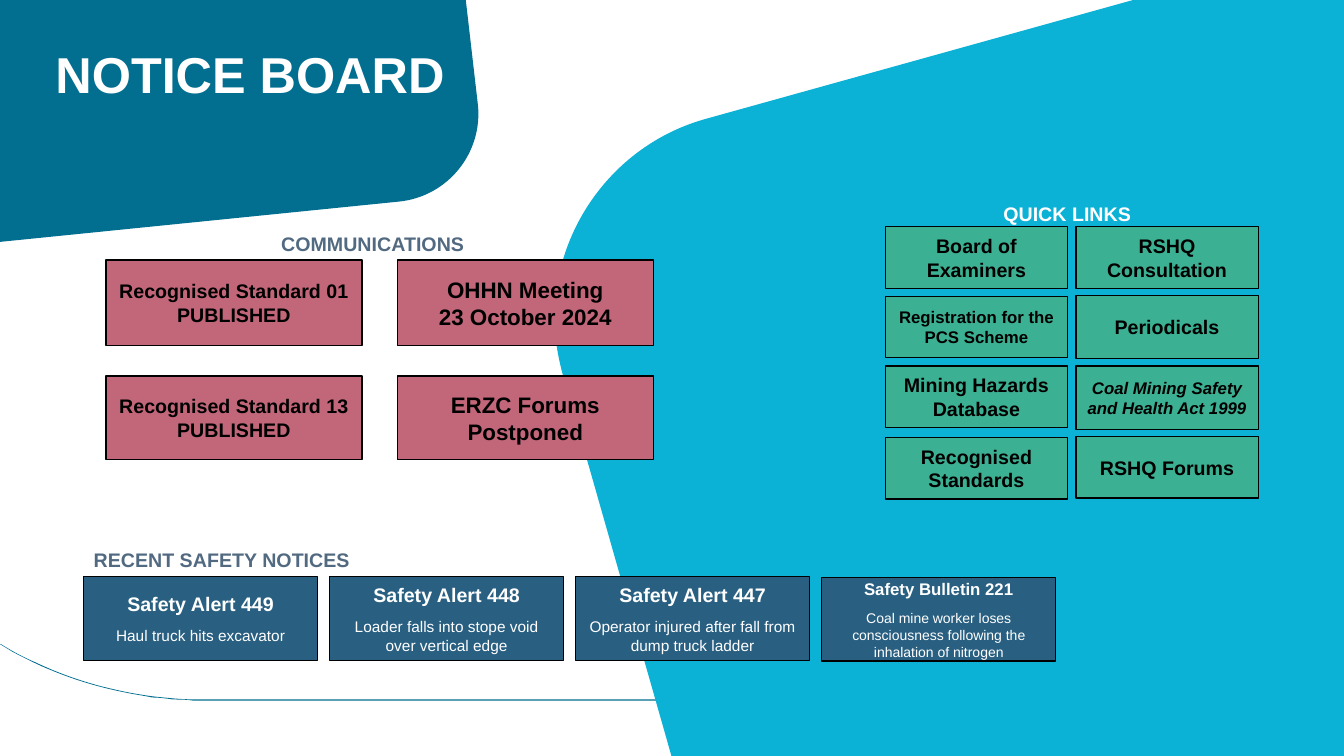
"""Build the notice board slide with communications, quick links and safety notices."""
from dataclasses import dataclass

from lxml import etree
from pptx import Presentation, util as u
from pptx.dml import color
from pptx.enum import shapes, text
from pptx.oxml import ns

RECT = shapes.MSO_SHAPE.RECTANGLE
BUTTON = shapes.MSO_SHAPE.ACTION_BUTTON_CUSTOM
CENTER, LEFT = text.PP_ALIGN.CENTER, text.PP_ALIGN.LEFT
TEAL, CYAN, GREEN, ROSE, NAVY = "026F90", "0CB1D6", "3CB092", "C2667A", "295F81"
BLACK, WHITE, SLATE = "000000", "FFFFFF", "526A81"


@dataclass
class Line:
    text: str
    size: float
    bold: bool = True
    italic: bool = False
    before: float = 0


@dataclass
class Card:
    left: float
    top: float
    width: float
    height: float
    fill: str
    ink: str
    lines: list[Line]
    kind: shapes.MSO_SHAPE = BUTTON


@dataclass
class Heading:
    text: str
    left: float
    top: float
    width: float
    height: float
    ink: str = SLATE
    align: text.PP_ALIGN = LEFT
    spacing: float = 1.0


@dataclass
class Outline:
    """Hold a fill, a start point and steps of two (line) or six (curve) numbers."""
    fill: str
    start: tuple[float, float]
    steps: list[tuple[float, ...]]


OUTLINES = [
    Outline(TEAL, (0, 6.39), [
        (0.01, 6.39), (0.12, 6.46, 0.23, 6.52, 0.35, 6.57),
        (0.56, 6.67, 0.78, 6.75, 1.01, 6.81), (1.13, 6.84, 1.26, 6.87, 1.39, 6.89),
        (1.5, 6.91, 1.62, 6.92, 1.73, 6.93), (1.84, 6.94, 1.95, 6.94, 2.06, 6.94),
        (13.31, 6.94), (13.32, 6.94, 13.33, 6.94, 13.33, 6.94), (13.33, 6.95),
        (1.92, 6.95), (1.92, 6.95, 1.91, 6.95, 1.91, 6.95),
        (1.85, 6.94, 1.78, 6.94, 1.72, 6.94), (1.65, 6.93, 1.58, 6.92, 1.51, 6.92),
        (1.42, 6.9, 1.33, 6.89, 1.24, 6.87), (0.99, 6.82, 0.75, 6.75, 0.51, 6.65),
        (0.38, 6.6, 0.25, 6.53, 0.13, 6.47), (0, 6.39)]),
    Outline(TEAL, (0, 0), [
        (4.62, 0), (4.74, 1.04), (4.79, 1.52, 4.44, 1.95, 3.96, 2), (0, 2.4)]),
    Outline(CYAN, (11.24, 0), [
        (13.33, 0), (13.33, 7.5), (6.66, 7.5), (5.58, 3.71),
        (5.53, 3.52, 5.5, 3.34, 5.5, 3.15), (5.5, 2.26, 6.1, 1.43, 7, 1.18)]),
]
QUICK_LINKS = [
    Card(8.78, 2.25, 1.81, 0.61, GREEN, BLACK, [Line("Board of Examiners", 14)], RECT),
    Card(8.78, 2.94, 1.81, 0.61, GREEN, BLACK,
         [Line("Registration for the PCS Scheme", 12)], RECT),
    Card(8.78, 3.63, 1.81, 0.61, GREEN, BLACK, [Line("Mining Hazards Database", 14)], RECT),
    Card(8.78, 4.34, 1.81, 0.61, GREEN, BLACK, [Line("Recognised Standards", 14)]),
    Card(10.67, 2.25, 1.81, 0.61, GREEN, BLACK, [Line("RSHQ Consultation", 14)]),
    Card(10.67, 2.93, 1.81, 0.63, GREEN, BLACK, [Line("Periodicals", 14)]),
    Card(10.67, 3.63, 1.81, 0.63, GREEN, BLACK,
         [Line("Coal Mining Safety and Health Act 1999", 12, italic=True)]),
    Card(10.67, 4.33, 1.81, 0.61, GREEN, BLACK, [Line("RSHQ Forums", 14)]),
]
COMMUNICATIONS = [
    (2.58, 0.85, [("Recognised Standard 01", "PUBLISHED", 14),
                  ("OHHN Meeting", "23 October 2024", 16)]),
    (3.73, 0.83, [("Recognised Standard 13", "PUBLISHED", 14),
                  ("ERZC Forums", "Postponed", 16)]),
]
NOTICES = [
    ("Safety Alert 449", "Haul truck hits excavator", 14, 11, 5.72),
    ("Safety Alert 448", "Loader falls into stope void over vertical edge", 14, 11, 5.72),
    ("Safety Alert 447", "Operator injured after fall from dump truck ladder", 14, 11, 5.72),
    ("Safety Bulletin 221",
     "Coal mine worker loses consciousness following the inhalation of nitrogen", 12, 10, 5.73),
]
HEADINGS = [
    Heading("COMMUNICATIONS", 2.69, 2.25, 2.2, 0.36),
    Heading("QUICK LINKS", 9.68, 1.98, 1.81, 0.33, WHITE, CENTER, 0.9),
    Heading("RECENT SAFETY NOTICES", 0.83, 5.39, 3.09, 0.36),
]


def rgb(value: str) -> color.RGBColor:
    """Turn a hex string into a colour."""
    return color.RGBColor.from_string(value)


def style(p, line: Line, ink: str, align: text.PP_ALIGN) -> None:
    """Write one line into a paragraph and format it."""
    p.text, p.alignment = line.text, align
    p.font.name, p.font.size = "Arial", u.Pt(line.size)
    p.font.bold, p.font.italic = line.bold, line.italic
    p.font.color.rgb = rgb(ink)
    p.space_before = u.Pt(line.before)


def bend(sp, steps: list[tuple[float, ...]]) -> None:
    """Turn the straight segments of six-number steps into cubic curves."""
    segments = list(sp.element.iter(ns.qn("a:lnTo")))
    for segment, step in zip(segments, steps):
        if len(step) == 6:
            curve = etree.Element(ns.qn("a:cubicBezTo"))
            for x, y in zip(step[::2], step[1::2]):
                etree.SubElement(curve, ns.qn("a:pt"), x=str(u.Inches(x) - sp.left),
                                 y=str(u.Inches(y) - sp.top))
            segment.getparent().replace(segment, curve)


def draw_outline(slide, outline: Outline) -> None:
    """Draw a filled background outline."""
    ends = [(u.Inches(step[-2]), u.Inches(step[-1])) for step in outline.steps]
    builder = slide.shapes.build_freeform(*map(u.Inches, outline.start))
    builder.add_line_segments(ends, close=True)
    sp = builder.convert_to_shape()
    bend(sp, outline.steps)
    sp.shadow.inherit = False
    sp.fill.solid()
    sp.fill.fore_color.rgb = rgb(outline.fill)
    sp.line.fill.background()


def draw_card(slide, card: Card) -> None:
    """Draw a bordered card with centred lines."""
    box = map(u.Inches, (card.left, card.top, card.width, card.height))
    sp = slide.shapes.add_shape(card.kind, *box)
    sp.shadow.inherit = False
    sp.fill.solid()
    sp.fill.fore_color.rgb = rgb(card.fill)
    sp.line.color.rgb = rgb(BLACK)
    sp.line.width = u.Pt(1)
    tf = sp.text_frame
    tf.word_wrap, tf.vertical_anchor = True, text.MSO_ANCHOR.MIDDLE
    for i, line in enumerate(card.lines):
        style(tf.add_paragraph() if i else tf.paragraphs[0], line, card.ink, CENTER)


def draw_heading(slide, head: Heading) -> None:
    """Draw a section heading."""
    box = map(u.Inches, (head.left, head.top, head.width, head.height))
    tf = slide.shapes.add_textbox(*box).text_frame
    tf.word_wrap = True
    style(tf.paragraphs[0], Line(head.text, 14), head.ink, head.align)
    tf.paragraphs[0].line_spacing = head.spacing


def draw_title(slide) -> None:
    """Place the title in front of the background outlines."""
    title = slide.shapes.title
    title.left, title.top, title.width, title.height = map(u.Inches, (0.51, 0.47, 4.12, 0.83))
    tf = title.text_frame
    tf.word_wrap, tf.auto_size = True, text.MSO_AUTO_SIZE.NONE
    tf.vertical_anchor = text.MSO_ANCHOR.TOP
    tf.margin_left = tf.margin_top = tf.margin_right = tf.margin_bottom = u.Inches(0.04)
    style(tf.paragraphs[0], Line("NOTICE BOARD", 36), WHITE, LEFT)
    tf.paragraphs[0].line_spacing = u.Pt(37.5)
    title.element.getparent().append(title.element)


def main() -> None:
    """Build and save the slide."""
    prs = Presentation()
    prs.slide_width, prs.slide_height = u.Inches(13.33), u.Inches(7.5)
    slide = prs.slides.add_slide(prs.slide_layouts[5])
    for outline in OUTLINES:
        draw_outline(slide, outline)
    for card in QUICK_LINKS:
        draw_card(slide, card)
    for top, height, pair in COMMUNICATIONS:
        for col, (name, status, size) in enumerate(pair):
            draw_card(slide, Card(1.05 + 2.89 * col, top, 2.54, height, ROSE, BLACK,
                                  [Line(name, size), Line(status, size)], RECT))
    for col, (name, detail, size, small, top) in enumerate(NOTICES):
        draw_card(slide, Card(0.83 + 2.44 * col, top, 2.32, 0.83, NAVY, WHITE,
                              [Line(name, size), Line(detail, small, bold=False, before=8)]))
    for head in HEADINGS:
        draw_heading(slide, head)
    draw_title(slide)
    prs.save("out.pptx")


if __name__ == "__main__":
    main()
